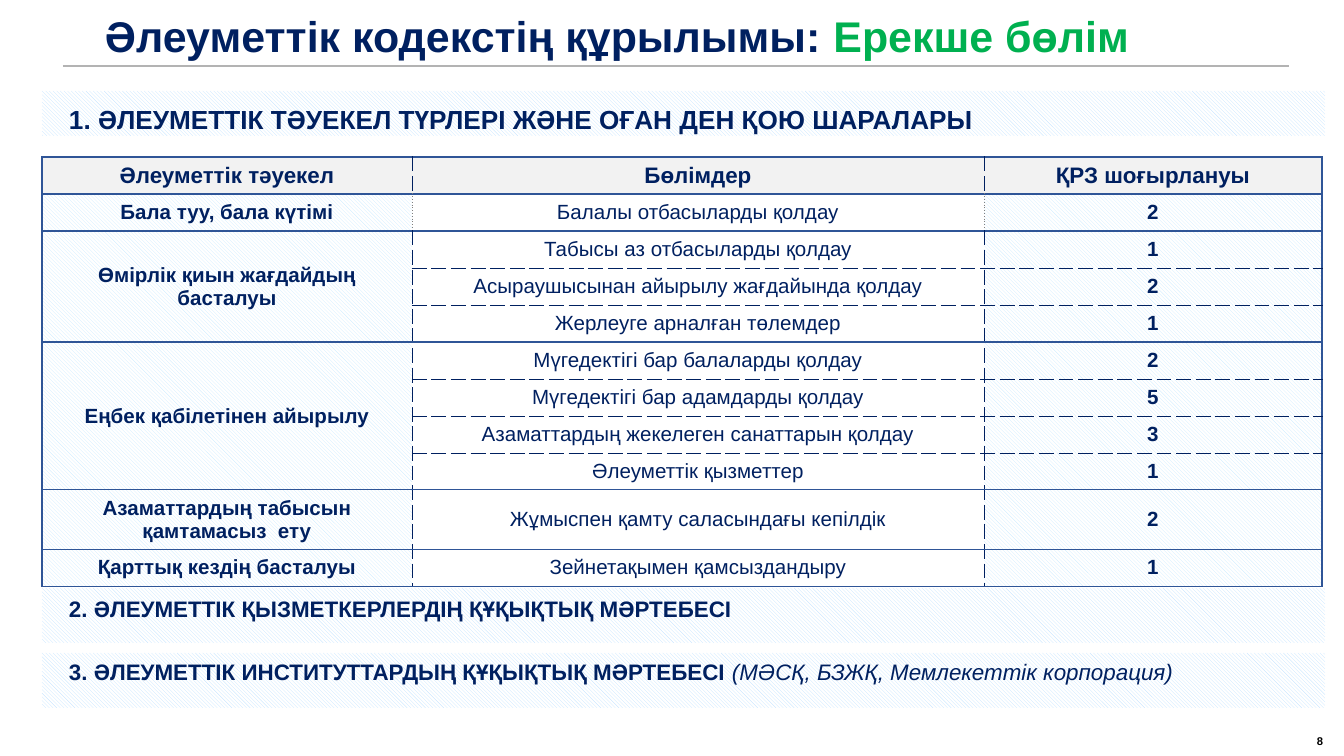
"""Build the slide on the structure of the Social Code."""
from lxml import etree
from pptx import Presentation
from pptx import util as u
from pptx.dml.color import RGBColor
from pptx.enum import dml, shapes, text
from pptx.oxml.ns import qn

SCALE = 914400 / 134.4
FONT = "Arial"
NAVY = RGBColor(0x00, 0x20, 0x60)
GREEN = RGBColor(0x00, 0xB0, 0x50)
BLUE = RGBColor(0x2F, 0x55, 0x97)
BLACK = RGBColor(0x00, 0x00, 0x00)
WHITE = RGBColor(0xFF, 0xFF, 0xFF)
GREY = RGBColor(0x80, 0x80, 0x80)
RULE_GREY = RGBColor(0xB3, 0xB3, 0xB3)
HEADER_GREY = RGBColor(0xF2, 0xF2, 0xF2)
BAND_HATCH = RGBColor(0xC2, 0xE3, 0xFF)
CELL_HATCH = RGBColor(0xCC, 0xEC, 0xFF)

SOLID = (BLUE, 0.75, "solid")
DASH = (NAVY, 0.25, "dash")
DOT = (GREY, 0.5, "sysDot")

COLUMNS = (370, 572, 338)
ROW, TALL_ROW = 37, 59
HEADER = ("Әлеуметтік тәуекел", "Бөлімдер", "ҚРЗ шоғырлануы")
RISKS = (
    ("Бала туу, бала күтімі", [("Балалы отбасыларды қолдау", 2)]),
    ("Өмірлік қиын жағдайдың басталуы", [
        ("Табысы аз отбасыларды қолдау", 1),
        ("Асыраушысынан айырылу жағдайында қолдау", 2),
        ("Жерлеуге арналған төлемдер", 1),
    ]),
    ("Еңбек қабілетінен айырылу", [
        ("Мүгедектігі бар балаларды қолдау", 2),
        ("Мүгедектігі бар адамдарды қолдау", 5),
        ("Азаматтардың жекелеген санаттарын қолдау", 3),
        ("Әлеуметтік қызметтер", 1),
    ]),
    ("Азаматтардың табысын қамтамасыз  ету",
     [("Жұмыспен қамту саласындағы кепілдік", 2)]),
    ("Қарттық кездің басталуы", [("Зейнетақымен қамсыздандыру", 1)]),
)


def px(n):
    """Turn pixels into EMU."""
    return u.Emu(round(n * SCALE))


def write(tf, txt, *, size, color=NAVY, bold=True, italic=False, align=text.PP_ALIGN.LEFT):
    """Append a formatted run to the first paragraph of a text frame."""
    p = tf.paragraphs[0]
    p.alignment = align
    r = p.add_run()
    r.text = txt
    r.font.name, r.font.size = FONT, u.Pt(size)
    r.font.bold, r.font.italic = bold, italic
    r.font.color.rgb = color


def set_margins(obj, left, top, right, bottom):
    """Set the inner margins of a text frame or a cell."""
    obj.margin_left, obj.margin_top = px(left), px(top)
    obj.margin_right, obj.margin_bottom = px(right), px(bottom)


def hatch(fill, color):
    """Fill with light downward diagonals on white."""
    fill.patterned()
    fill.pattern = dml.MSO_PATTERN.LIGHT_DOWNWARD_DIAGONAL
    fill.fore_color.rgb = color
    fill.back_color.rgb = WHITE


def add_text(s, x, y, w, h):
    """Add a wrapped, vertically centred text box and return its frame."""
    tf = s.shapes.add_textbox(px(x), px(y), px(w), px(h)).text_frame
    tf.word_wrap = True
    tf.vertical_anchor = text.MSO_ANCHOR.MIDDLE
    set_margins(tf, 8, 4, 8, 4)
    return tf


def add_band(s, y, h, inset, txt, size):
    """Add a hatched band with a section heading and return its frame."""
    sp = s.shapes.add_shape(shapes.MSO_SHAPE.RECTANGLE, px(42), px(y), px(1283), px(h))
    sp.shadow.inherit = False
    sp.line.fill.background()
    hatch(sp.fill, BAND_HATCH)
    tf = sp.text_frame
    tf.word_wrap = True
    tf.vertical_anchor = text.MSO_ANCHOR.TOP
    set_margins(tf, 27, inset, 0, 0)
    write(tf, txt, size=size)
    return tf


def add_rule(s, x1, x2, y):
    """Add a thin horizontal rule."""
    line = s.shapes.add_connector(shapes.MSO_CONNECTOR.STRAIGHT, px(x1), px(y), px(x2), px(y))
    line.line.color.rgb = RULE_GREY
    line.line.width = u.Pt(0.75)
    etree.SubElement(line._element.spPr, qn("a:effectLst"))


def set_borders(cell, **borders):
    """Draw cell borders given as L, R, T and B."""
    tc_pr = cell._tc.get_or_add_tcPr()
    for i, side in enumerate("LRTB"):
        color, width, dash = borders[side]
        ln = etree.Element(qn(f"a:ln{side}"), w=str(u.Pt(width)))
        fill = etree.SubElement(ln, qn("a:solidFill"))
        etree.SubElement(fill, qn("a:srgbClr"), val=str(color))
        etree.SubElement(ln, qn("a:prstDash"), val=dash)
        tc_pr.insert(i, ln)


def fill_cell(cell, txt, *, size=11, bold=True):
    """Write centred text into a cell."""
    cell.vertical_anchor = text.MSO_ANCHOR.MIDDLE
    set_margins(cell, 9, 5, 9, 5)
    write(cell.text_frame, txt, size=size, bold=bold, align=text.PP_ALIGN.CENTER)


def style_row(table, row, top, bottom, inner):
    """Fill and border one row of the table."""
    for col in range(3):
        cell = table.cell(row, col)
        if row == 0:
            cell.fill.solid()
            cell.fill.fore_color.rgb = HEADER_GREY
        elif col == 1:
            cell.fill.background()
        else:
            hatch(cell.fill, CELL_HATCH)
        set_borders(cell, L=inner if col else SOLID, R=inner if col < 2 else SOLID,
                    T=top if col else SOLID, B=bottom if col else SOLID)


def add_risk_table(s):
    """Add the table of social risks, sections and counts."""
    heights = [ROW]
    for _, sections in RISKS:
        heights += [ROW] * len(sections)
    heights[-2] = TALL_ROW
    table = s.shapes.add_table(len(heights), 3, px(42), px(157),
                               px(sum(COLUMNS)), px(sum(heights))).table
    table.first_row = table.horz_banding = False
    for column, w in zip(table.columns, COLUMNS):
        column.width = px(w)
    for row, h in zip(table.rows, heights):
        row.height = px(h)

    style_row(table, 0, SOLID, SOLID, DASH)
    for col, label in enumerate(HEADER):
        fill_cell(table.cell(0, col), label, size=12)
    first = 1
    for risk, sections in RISKS:
        last = first + len(sections) - 1
        for row, (section, count) in enumerate(sections, first):
            style_row(table, row, SOLID if row == first else DASH,
                      SOLID if row == last else DASH, DOT if row == 1 else DASH)
            fill_cell(table.cell(row, 1), section, bold=False)
            fill_cell(table.cell(row, 2), str(count))
        if last > first:
            table.cell(first, 0).merge(table.cell(last, 0))
        fill_cell(table.cell(first, 0), risk)
        first = last + 1


def main():
    """Build and save the slide."""
    prs = Presentation()
    prs.slide_width, prs.slide_height = px(1344), px(756)
    s = prs.slides.add_slide(prs.slide_layouts[6])

    write(add_text(s, 1302, 732, 36, 18), "8", size=6, color=BLACK, align=text.PP_ALIGN.CENTER)
    add_band(s, 91, 45, 12, "1. ӘЛЕУМЕТТІК ТӘУЕКЕЛ ТҮРЛЕРІ ЖӘНЕ ОҒАН ДЕН ҚОЮ ШАРАЛАРЫ", 14)
    add_band(s, 588, 55, 7, "2. ӘЛЕУМЕТТІК ҚЫЗМЕТКЕРЛЕРДІҢ ҚҰҚЫҚТЫҚ МӘРТЕБЕСІ", 12)
    tf = add_band(s, 653, 55, 5, "3. ӘЛЕУМЕТТІК ИНСТИТУТТАРДЫҢ ҚҰҚЫҚТЫҚ МӘРТЕБЕСІ ", 12)
    write(tf, "(МӘСҚ, БЗЖҚ, Мемлекеттік корпорация)", size=12, bold=False, italic=True)

    title = add_text(s, 97, 0, 1247, 70)
    write(title, "Әлеуметтік кодекстің құрылымы: ", size=23)
    write(title, "Ерекше бөлім", size=23, color=GREEN)
    add_rule(s, 63, 1289, 66)
    add_risk_table(s)
    prs.save("out.pptx")


if __name__ == "__main__":
    main()
